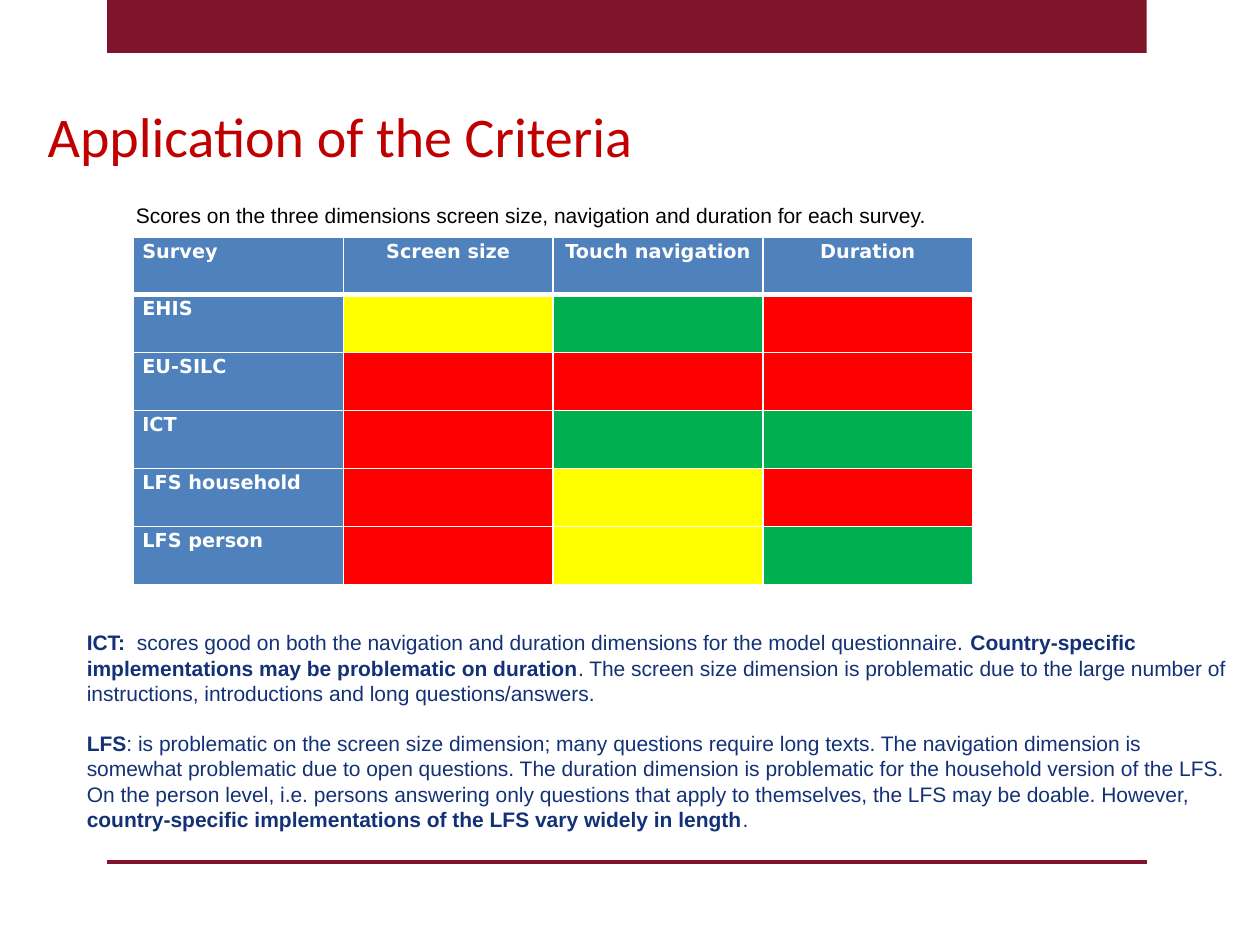
from typing import NamedTuple

from pptx import Presentation
from pptx.dml.color import RGBColor
from pptx.enum import shapes, text
from pptx.oxml import parse_xml
from pptx.oxml.ns import nsdecls, qn
from pptx.util import Inches, Pt

MAROON = RGBColor(0x7F, 0x14, 0x2A)
TITLE_RED = RGBColor(0xC0, 0x00, 0x00)
NAVY = RGBColor(0x13, 0x31, 0x76)
BLACK = RGBColor(0x00, 0x00, 0x00)
WHITE = RGBColor(0xFF, 0xFF, 0xFF)
HEADER_BLUE = RGBColor(0x4F, 0x81, 0xBD)
RED = RGBColor(0xFF, 0x00, 0x00)
YELLOW = RGBColor(0xFF, 0xFF, 0x00)
GREEN = RGBColor(0x00, 0xB0, 0x50)


class Survey(NamedTuple):
    name: str
    scores: tuple[RGBColor, ...]


class Span(NamedTuple):
    text: str
    bold: bool = False


HEADINGS = ("Survey", "Screen size", "Touch navigation", "Duration")
SURVEYS = (
    Survey("EHIS", (YELLOW, GREEN, RED)),
    Survey("EU-SILC", (RED, RED, RED)),
    Survey("ICT", (RED, GREEN, GREEN)),
    Survey("LFS household", (RED, YELLOW, RED)),
    Survey("LFS person", (RED, YELLOW, GREEN)),
)
COMMENTS = (
    (
        Span("ICT:  ", True),
        Span("scores good on both the navigation and duration dimensions for "
             "the model questionnaire. "),
        Span("Country-specific implementations may be problematic on duration", True),
        Span(". The screen size dimension is problematic due to the large number "
             "of instructions, introductions and long questions/answers."),
    ),
    (
        Span("LFS", True),
        Span(": is problematic on the screen size dimension; many questions "
             "require long texts. The navigation dimension is somewhat problematic "
             "due to open questions. The duration dimension is problematic for the "
             "household version of the LFS. On the person level, i.e. persons "
             "answering only questions that apply to themselves, the LFS may be "
             "doable. However, "),
        Span("country-specific implementations of the LFS vary widely in length", True),
        Span("."),
    ),
)


def add_run(p, content: str, *, size: float, font: str, color: RGBColor,
            bold: bool = False) -> None:
    r = p.add_run()
    r.text = content
    r.font.size, r.font.name, r.font.bold = Pt(size), font, bold
    r.font.color.rgb = color


def add_text(s, paragraphs, left: float, top: float, width: float, height: float,
             *, size: float, font: str, color: RGBColor, gap: float = 0) -> None:
    tf = s.shapes.add_textbox(Inches(left), Inches(top), Inches(width),
                              Inches(height)).text_frame
    tf.word_wrap = True
    for i, spans in enumerate(paragraphs):
        p = tf.add_paragraph() if i else tf.paragraphs[0]
        if i:
            p.space_before = Pt(gap)
        for span in spans:
            add_run(p, span.text, size=size, font=font, color=color, bold=span.bold)


def set_borders(cell, bottom: float, top: float) -> None:
    """White lines around a cell, placed before its fill as the schema asks."""
    tc_pr = cell._tc.get_or_add_tcPr()
    widths = {"lnL": 1, "lnR": 1, "lnT": top, "lnB": bottom}
    for i, (tag, width) in enumerate(widths.items()):
        tc_pr.insert(i, parse_xml(
            f'<a:{tag} {nsdecls("a")} w="{Pt(width)}"><a:solidFill>'
            f'<a:srgbClr val="{WHITE}"/></a:solidFill></a:{tag}>'))


def fill_cell(cell, color: RGBColor, row: int, label: str = "",
              align=text.PP_ALIGN.JUSTIFY) -> None:
    cell.fill.solid()
    cell.fill.fore_color.rgb = color
    cell.margin_left = cell.margin_right = Inches(0.07)
    cell.margin_top = cell.margin_bottom = 0
    set_borders(cell, bottom=3 if row == 0 else 1, top=3 if row == 1 else 1)
    if label:
        p = cell.text_frame.paragraphs[0]
        p.alignment, p.line_spacing = align, 1.15
        add_run(p, label, size=11, font="DejaVu Sans", color=WHITE, bold=True)


def add_score_table(s) -> None:
    rows, cols = len(SURVEYS) + 1, len(HEADINGS)
    table = s.shapes.add_table(rows, cols, Inches(1.06), Inches(1.88),
                               Inches(6.66), Inches(2.76)).table
    for row in table.rows:
        row.height = Inches(0.46)
    for c, heading in enumerate(HEADINGS):
        align = text.PP_ALIGN.CENTER if c else text.PP_ALIGN.JUSTIFY
        fill_cell(table.cell(0, c), HEADER_BLUE, 0, heading, align)
    for r, survey in enumerate(SURVEYS, 1):
        fill_cell(table.cell(r, 0), HEADER_BLUE, r, survey.name)
        for c, score in enumerate(survey.scores, 1):
            fill_cell(table.cell(r, c), score, r)


def add_frame(s) -> None:
    left, right = Inches(0.85), Inches(9.1)
    bar = s.shapes.add_shape(shapes.MSO_SHAPE.RECTANGLE, left, 0, right - left,
                             Inches(0.42))
    bar.shadow.inherit = False
    bar.fill.solid()
    bar.fill.fore_color.rgb = MAROON
    bar.line.fill.background()

    rule = s.shapes.add_connector(shapes.MSO_CONNECTOR.STRAIGHT, left, Inches(6.84),
                                  right, Inches(6.84))
    rule.line.color.rgb = MAROON
    rule.line.width = Pt(2)
    rule._element.spPr.append(rule._element.makeelement(qn("a:effectLst"), {}))


def main() -> None:
    prs = Presentation()
    prs.slide_width, prs.slide_height = Inches(10), Inches(7.5)
    s = prs.slides.add_slide(prs.slide_layouts[6])

    # Top bar and bottom rule
    add_frame(s)

    # Title and table caption
    add_text(s, [[Span("Application of the Criteria")]], 0.28, 0.76, 9.29, 0.95,
             size=32, font="Calibri", color=TITLE_RED)
    add_text(s, [[Span("Scores on the three dimensions screen size, navigation and "
                       "duration for each survey.")]], 0.98, 1.56, 7.95, 0.3,
             size=12, font="Arial", color=BLACK)

    # Scores per survey
    add_score_table(s)

    # Comments on two surveys
    add_text(s, COMMENTS, 0.59, 4.95, 9.29, 1.72, size=12, font="Arial", color=NAVY,
             gap=14.4)

    prs.save("out.pptx")


if __name__ == "__main__":
    main()
